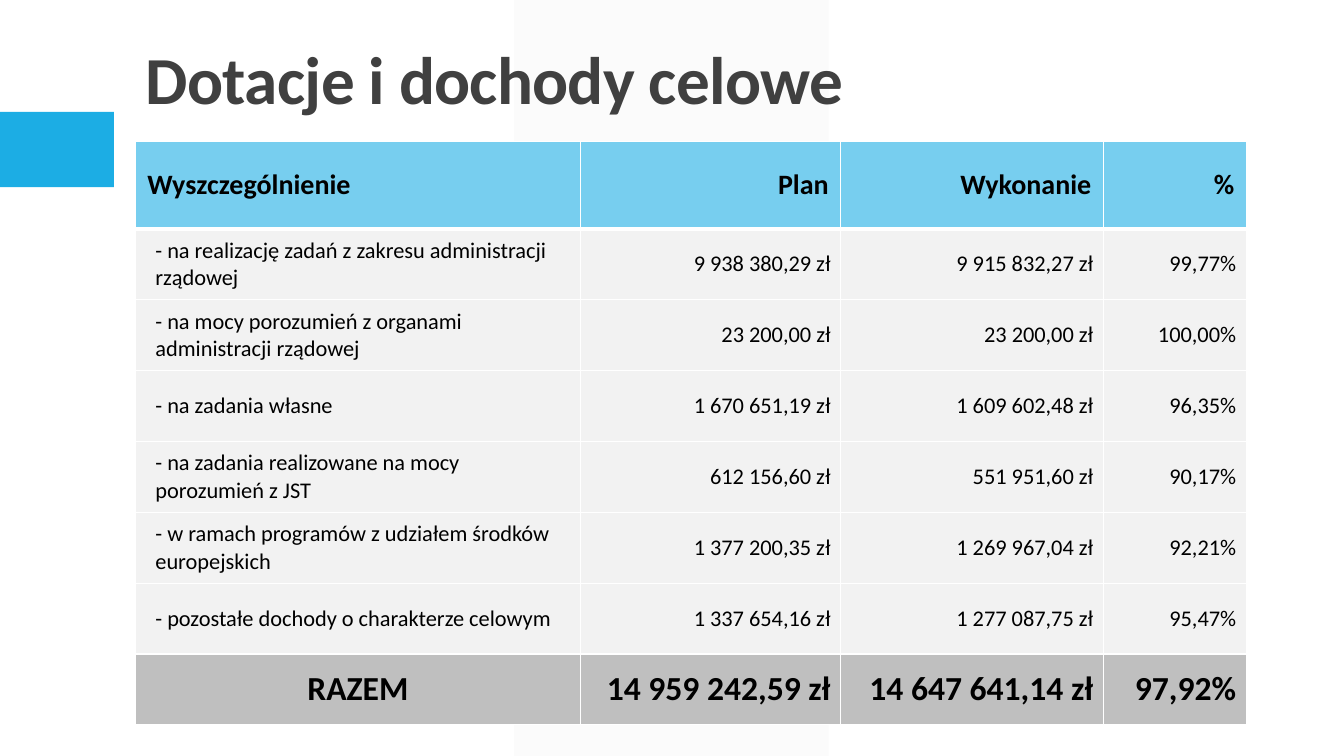
from lxml.etree import SubElement
from pptx import Presentation
from pptx.dml.color import RGBColor
from pptx.enum.shapes import MSO_SHAPE
from pptx.enum.text import MSO_ANCHOR, PP_ALIGN
from pptx.oxml import parse_xml
from pptx.oxml.ns import nsdecls, qn
from pptx.util import Pt

TITLE = "Dotacje i dochody celowe"
HEADER = ("Wyszczególnienie", "Plan", "Wykonanie", "%")
GRANTS = [
    ("- na realizację zadań z zakresu administracji rządowej", "9 938 380,29 zł", "9 915 832,27 zł", "99,77%"),
    ("- na mocy porozumień z organami administracji rządowej", "23 200,00 zł", "23 200,00 zł", "100,00%"),
    ("- na zadania własne", "1 670 651,19 zł", "1 609 602,48 zł", "96,35%"),
    ("- na zadania realizowane na mocy porozumień z JST", "612 156,60 zł", "551 951,60 zł", "90,17%"),
    ("- w ramach programów z udziałem środków europejskich", "1 377 200,35 zł", "1 269 967,04 zł", "92,21%"),
    ("- pozostałe dochody o charakterze celowym", "1 337 654,16 zł", "1 277 087,75 zł", "95,47%"),
]
TOTAL = ("RAZEM", "14 959 242,59 zł", "14 647 641,14 zł", "97,92%")

THEME = {
    "font": "Calibri",
    "title": {"size": 48, "bold": True, "color": "404040"},
    "header": {"size": 20, "bold": True, "color": "000000"},
    "grant": {"size": 16, "bold": False, "color": "000000"},
    "total": {"size": 24, "bold": True, "color": "000000"},
    "fills": {"header": "77CEEF", "grant": "F2F2F2", "total": "BFBFBF"},
    "band": "F2F2F2",
    "accent": "1CADE4",
    "border": "FFFFFF",
}
SLIDE_SIZE = (960, 540)
BAND_BOX = (367.2, 0, 224.64, 540)
ACCENT_BOX = (0, 80, 81.4, 53.8)
TITLE_BOX = (97.2, 31.68, 792, 56.88)
TABLE_ORIGIN = (96.6, 101)
COLUMN_WIDTHS = (318.2, 185.8, 187.6, 102)
HEADER_HEIGHT, ROW_HEIGHT = 62.4, 50.64
# Horizontal and vertical cell margins
HEADER_MARGINS, LABEL_MARGINS, VALUE_MARGINS = (8.64, 4.32), (14.4, 3.6), (7.2, 3.6)


def set_attributes(target, values):
    for name, value in values.items():
        setattr(target, name, value)


def points(box):
    return [Pt(length) for length in box]


def write(paragraph, text, style, alignment=PP_ALIGN.LEFT):
    paragraph.alignment = alignment
    run = paragraph.add_run()
    run.text = text
    set_attributes(run.font, {"name": THEME["font"], "size": Pt(style["size"]), "bold": style["bold"]})
    run.font.color.rgb = RGBColor.from_string(style["color"])
    return run


def add_block(slide, preset, box, color):
    shape = slide.shapes.add_shape(preset, *points(box))
    shape.shadow.inherit = False
    shape.fill.solid()
    shape.fill.fore_color.rgb = RGBColor.from_string(color)
    shape.line.fill.background()
    return shape


def add_background(slide):
    band = add_block(slide, MSO_SHAPE.PARALLELOGRAM, BAND_BOX, THEME["band"])
    band.adjustments[0] = 0
    color = next(band.fill._xPr.iter(qn("a:srgbClr")))
    SubElement(color, qn("a:alpha"), val="30000")
    add_block(slide, MSO_SHAPE.RECTANGLE, ACCENT_BOX, THEME["accent"])


def add_title(slide):
    frame = slide.shapes.add_textbox(*points(TITLE_BOX)).text_frame
    set_attributes(frame, {"word_wrap": True, "vertical_anchor": MSO_ANCHOR.BOTTOM})
    paragraph = frame.paragraphs[0]
    paragraph.line_spacing = 0.9
    run = write(paragraph, TITLE, THEME["title"])
    run.font._element.set("spc", "-50")


def set_borders(cell, widths):
    """Put borders, given in points by side, ahead of the cell fill."""
    properties = cell._tc.get_or_add_tcPr()
    for index, side in enumerate("LRTB"):
        properties.insert(index, parse_xml(
            f'<a:ln{side} {nsdecls("a")} w="{Pt(widths[side])}"><a:solidFill>'
            f'<a:srgbClr val="{THEME["border"]}"/></a:solidFill></a:ln{side}>'))


def fill_cell(cell, text, kind, column, border_widths):
    if kind == "header":
        margins = HEADER_MARGINS
    else:
        margins = LABEL_MARGINS if kind == "grant" and column == 0 else VALUE_MARGINS
    horizontal, vertical = points(margins)
    set_attributes(cell, {
        "margin_left": horizontal, "margin_right": horizontal,
        "margin_top": vertical, "margin_bottom": vertical,
        "vertical_anchor": MSO_ANCHOR.MIDDLE,
    })
    cell.fill.solid()
    cell.fill.fore_color.rgb = RGBColor.from_string(THEME["fills"][kind])
    set_borders(cell, border_widths)
    label_alignment = PP_ALIGN.CENTER if kind == "total" else PP_ALIGN.LEFT
    alignment = PP_ALIGN.RIGHT if column else label_alignment
    write(cell.text_frame.paragraphs[0], text, THEME[kind], alignment)


def add_grants_table(slide):
    rows = [("header", HEADER), *(("grant", grant) for grant in GRANTS), ("total", TOTAL)]
    heights = [HEADER_HEIGHT] + [ROW_HEIGHT] * (len(rows) - 1)
    box = (*TABLE_ORIGIN, sum(COLUMN_WIDTHS), sum(heights))
    table = slide.shapes.add_table(len(rows), len(HEADER), *points(box)).table
    for column, width in zip(table.columns, COLUMN_WIDTHS):
        column.width = Pt(width)
    for row_index, (kind, texts) in enumerate(rows):
        table.rows[row_index].height = Pt(heights[row_index])
        border_widths = {"L": 1, "R": 1, "T": 3 if row_index == 1 else 1, "B": 3 if row_index == 0 else 1}
        for column_index, text in enumerate(texts):
            fill_cell(table.cell(row_index, column_index), text, kind, column_index, border_widths)


def main():
    presentation = Presentation()
    width, height = points(SLIDE_SIZE)
    set_attributes(presentation, {"slide_width": width, "slide_height": height})
    slide = presentation.slides.add_slide(presentation.slide_layouts[6])
    add_background(slide)
    add_title(slide)
    add_grants_table(slide)
    presentation.save("out.pptx")


if __name__ == "__main__":
    main()
